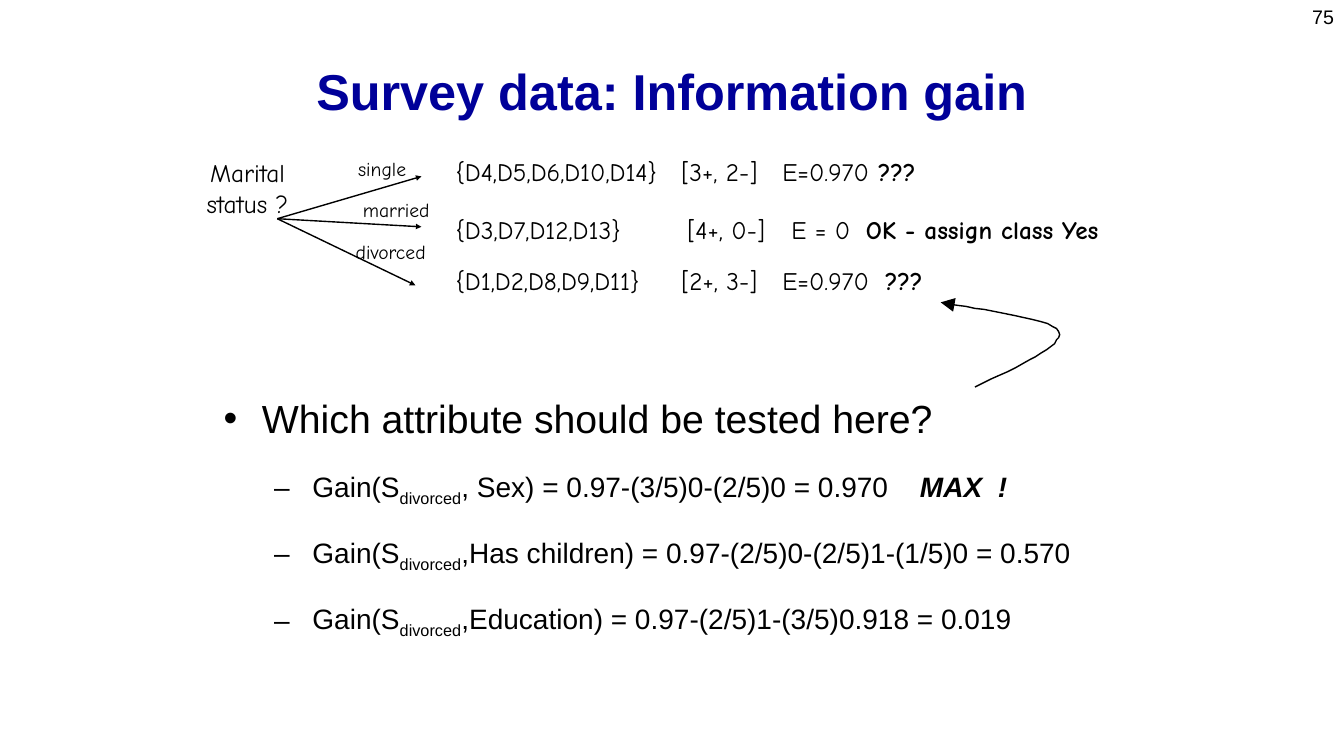
from lxml import etree
from pptx import Presentation
from pptx.dml.color import RGBColor
from pptx.enum.shapes import MSO_CONNECTOR
from pptx.enum.text import MSO_ANCHOR, PP_ALIGN
from pptx.oxml.ns import qn
from pptx.util import Pt

PX = 9144
BLACK = RGBColor(0, 0, 0)
NAVY = RGBColor(0, 0, 0x99)
STRAIGHT = MSO_CONNECTOR.STRAIGHT
LEFT, CENTER, RIGHT = PP_ALIGN.LEFT, PP_ALIGN.CENTER, PP_ALIGN.RIGHT
TOP, MIDDLE, BOTTOM = MSO_ANCHOR.TOP, MSO_ANCHOR.MIDDLE, MSO_ANCHOR.BOTTOM
HAND = {"name": "Comic Neue", "size": Pt(18)}
LABEL = {"name": "Comic Neue", "size": Pt(14)}
PLAIN = {"name": "Arial", "size": Pt(14)}
QUESTION = {"name": "Arial", "size": Pt(28)}
GAIN = {"name": "Arial", "size": Pt(20)}
TITLE = {"name": "Arial", "size": Pt(36), "bold": True}

BRANCHES = [
    ("single", (155, 0, 72, 34), (230, 25), 0, (224, 324, 419),
     ("{D4,D5,D6,D10,D14}", "[3+, 2-]", "E=0.970", "???")),
    ("married", (159, 41, 92, 34), (230, 75), 58, (230, 333, 407),
     ("{D3,D7,D12,D13}", "[4+, 0-]", "E = 0", "OK - assign class Yes")),
    ("divorced", (150, 83, 99, 34), (224, 133), 108, (224, 324, 426),
     ("{D1,D2,D8,D9,D11}", "[2+, 3-]", "E=0.970", "???")),
]
GAINS = [
    (", Sex) = 0.97-(3/5)0-(2/5)0 = 0.970    ", "MAX  !"),
    (",Has children) = 0.97-(2/5)0-(2/5)1-(1/5)0 = 0.570", ""),
    (",Education) = 0.97-(2/5)1-(3/5)0.918 = 0.019", ""),
]


def add_run(paragraph, text, style, color=BLACK, **extra):
    """Append a run formatted from a dict of font values."""
    run = paragraph.add_run()
    run.text = text
    for name, value in {**style, **extra}.items():
        setattr(run.font, name, value)
    run.font.color.rgb = color
    return run


def add_box(slide, left, top, width, height, anchor=TOP, wrap=True):
    """Add an empty text box and return its text frame."""
    shape = slide.shapes.add_textbox(left * PX, top * PX, width * PX, height * PX)
    frame = shape.text_frame
    frame.word_wrap = wrap
    frame.vertical_anchor = anchor
    return frame


def add_lines(frame, lines, style, alignment=CENTER):
    """Fill a text frame with one paragraph for each line."""
    for index, line in enumerate(lines):
        paragraph = frame.add_paragraph() if index else frame.paragraphs[0]
        paragraph.alignment = alignment
        add_run(paragraph, line, style)


def format_arrow(shape, head_size):
    """Give a line its colour, width and end arrowhead, without shadow."""
    shape.line.color.rgb = BLACK
    shape.line.width = Pt(1)
    etree.SubElement(shape.line._get_or_add_ln(), qn("a:tailEnd"),
                     type="triangle", w=head_size, len=head_size)
    properties = shape._element.spPr
    if properties.find(qn("a:effectLst")) is None:
        etree.SubElement(properties, qn("a:effectLst"))


def add_title(slide, left, top, width, height):
    """Place and fill the title placeholder."""
    title = slide.shapes.title
    box = {"left": left, "top": top, "width": width, "height": height}
    for name, value in box.items():
        setattr(title, name, value * PX)
    title.text_frame.vertical_anchor = BOTTOM
    paragraph = title.text_frame.paragraphs[0]
    paragraph.alignment = CENTER
    add_run(paragraph, "Survey data: Information gain", TITLE, NAVY)


def add_row(slide, left, top, stops, cells):
    """Add one outcome line whose parts stand at tab stops."""
    paragraph = add_box(slide, left, top, 722, 40, MIDDLE).paragraphs[0]
    tabs = etree.SubElement(paragraph._p.get_or_add_pPr(), qn("a:tabLst"))
    for stop in stops:
        etree.SubElement(tabs, qn("a:tab"), pos=str(stop * PX), algn="l")
    add_run(paragraph, "\t".join(cells[:-1]) + "\t", HAND)
    add_run(paragraph, cells[-1], HAND, bold=True)


def add_tree(slide, left, top):
    """Draw the marital status split with its three branches."""
    add_lines(add_box(slide, left, top + 1, 115, 71, MIDDLE, False),
              ["Marital", "status ?"], HAND)
    for label, (x, y, width, height), (end_x, end_y), row_y, stops, cells in BRANCHES:
        arrow = slide.shapes.add_connector(
            STRAIGHT, (left + 87) * PX, (top + 67) * PX,
            (left + end_x) * PX, (top + end_y) * PX)
        format_arrow(arrow, "sm")
        add_lines(add_box(slide, left + x, top + y, width, height, MIDDLE, False),
                  [label], LABEL)
        add_row(slide, left + 254, top + row_y, stops, cells)


def curve_points(start, first, second, end, steps=16):
    """Return points along a cubic curve, after its start."""
    points = []
    for step in range(1, steps + 1):
        t = step / steps
        weights = ((1 - t) ** 3, 3 * t * (1 - t) ** 2, 3 * t * t * (1 - t), t ** 3)
        points.append(tuple(
            sum(weight * value for weight, value in zip(weights, values))
            for values in zip(start, first, second, end)))
    return points


def add_curved_arrow(slide, left, top):
    """Draw the curved arrow up to the divorced branch."""
    def place(x, y):
        return left + x, top + y

    start, bend = place(34, 84), place(117, 29)
    points = curve_points(start, place(78, 63), place(123, 43), bend)
    points += curve_points(bend, place(111, 15), place(18, 4), place(0, 0))
    builder = slide.shapes.build_freeform(*start, scale=PX)
    builder.add_line_segments(points, close=False)
    shape = builder.convert_to_shape()
    shape.shadow.inherit = False
    shape.fill.background()
    format_arrow(shape, "lg")


def format_bullet(paragraph, character, margin):
    """Set spacing, hanging indent and bullet of a paragraph."""
    paragraph.line_spacing = 1.6
    paragraph.space_before = Pt(3.6)
    properties = paragraph._p.get_or_add_pPr()
    properties.set("marL", str(margin * PX))
    properties.set("indent", str(-38 * PX))
    etree.SubElement(properties, qn("a:buFont"), typeface="Arial")
    etree.SubElement(properties, qn("a:buChar"), char=character)


def add_gains(slide, left, top, width, height):
    """Write the question and the gain of each attribute."""
    frame = add_box(slide, left, top, width, height)
    question = frame.paragraphs[0]
    format_bullet(question, "•", 50)
    add_run(question, "Which attribute should be tested here?", QUESTION)
    for formula, verdict in GAINS:
        paragraph = frame.add_paragraph()
        paragraph.level = 1
        format_bullet(paragraph, "–", 100)
        add_run(paragraph, "Gain(S", GAIN)
        subscript = add_run(paragraph, "divorced", GAIN)
        subscript.font._element.set("baseline", "-25000")
        add_run(paragraph, formula, GAIN)
        if verdict:
            add_run(paragraph, verdict, GAIN, bold=True, italic=True)


def main():
    """Build the slide and save it."""
    presentation = Presentation()
    presentation.slide_width = 1333 * PX
    presentation.slide_height = 750 * PX
    slide = presentation.slides.add_slide(presentation.slide_layouts[5])
    add_lines(add_box(slide, 1022, 0, 311, 52), ["75"], PLAIN, RIGHT)
    add_title(slide, 22, 0, 1289, 125)
    add_gains(slide, 200, 358, 942, 317)
    add_tree(slide, 188, 150)
    add_curved_arrow(slide, 933, 300)
    presentation.save("out.pptx")


if __name__ == "__main__":
    main()
